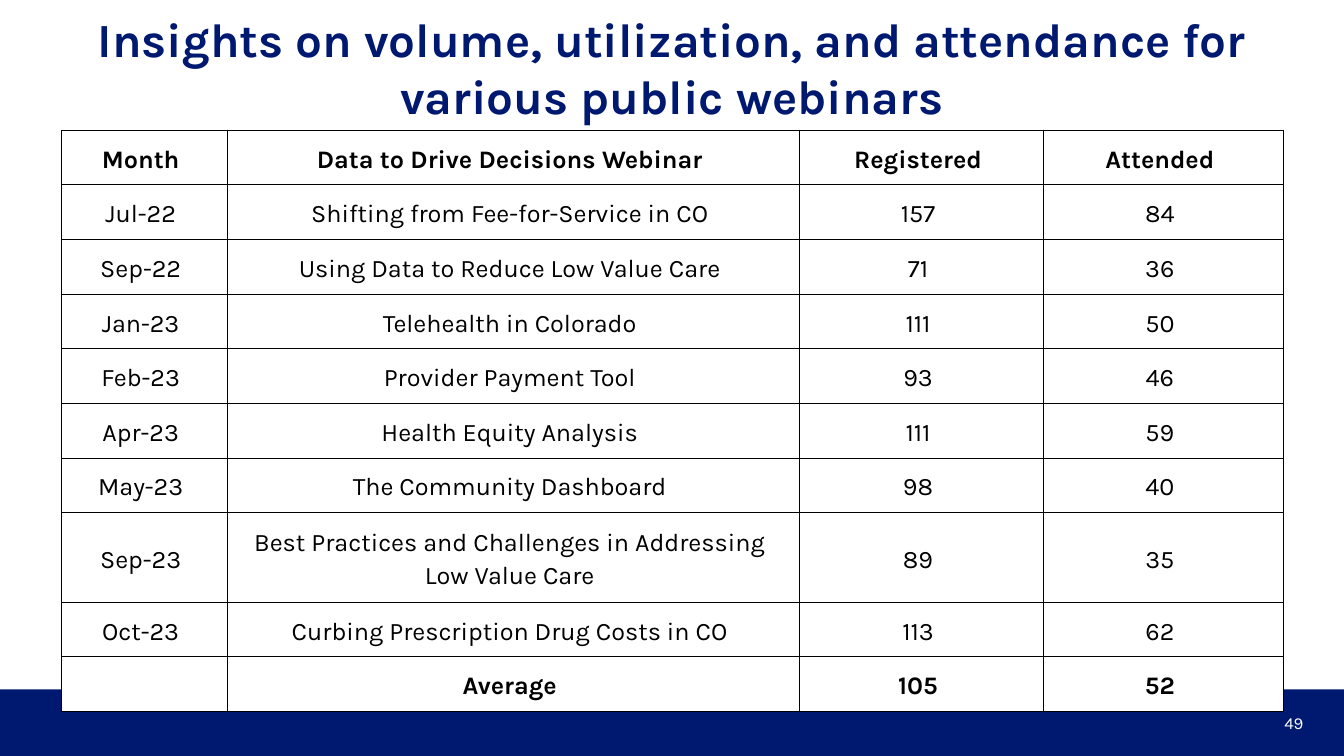
from lxml.etree import SubElement
from pptx import Presentation
from pptx.dml.color import RGBColor
from pptx.enum.shapes import MSO_SHAPE
from pptx.enum.text import MSO_ANCHOR, MSO_AUTO_SIZE, PP_ALIGN
from pptx.oxml.ns import qn
from pptx.util import Cm, Pt

NAVY, WHITE, BLACK = "001970", "FFFFFF", "000000"
FONT = "Karla"
TITLE = "Insights on volume, utilization, and attendance for various public webinars"
ROWS = [
    ("Month", "Data to Drive Decisions Webinar", "Registered", "Attended"),
    ("Jul-22", "Shifting from Fee-for-Service in CO", "157", "84"),
    ("Sep-22", "Using Data to Reduce Low Value Care", "71", "36"),
    ("Jan-23", "Telehealth in Colorado", "111", "50"),
    ("Feb-23", "Provider Payment Tool", "93", "46"),
    ("Apr-23", "Health Equity Analysis", "111", "59"),
    ("May-23", "The Community Dashboard", "98", "40"),
    ("Sep-23", "Best Practices and Challenges in Addressing Low Value Care", "89", "35"),
    ("Oct-23", "Curbing Prescription Drug Costs in CO", "113", "62"),
    ("", "Average", "105", "52"),
]
WIDTHS = (4.17, 14.43, 6.15, 6.04)
ROW, TALL = 1.36, 2.22
WRAPPED = 7


def color(code):
    return RGBColor.from_string(code)


def style(frame, size, code, align, bold=False):
    for para in frame.paragraphs:
        para.alignment = align
        para.font.size = Pt(size)
        for run in para.runs:
            font = run.font
            font.name, font.size, font.bold = FONT, Pt(size), bold
            font.color.rgb = color(code)


def inset(box, side, edge):
    box.margin_left = box.margin_right = Cm(side)
    box.margin_top = box.margin_bottom = Cm(edge)


def add_band(slide):
    band = slide.shapes.add_shape(
        MSO_SHAPE.RECTANGLE, Cm(0), Cm(17.37), Cm(33.87), Cm(1.68))
    band.shadow.inherit = False
    band.fill.solid()
    band.fill.fore_color.rgb = color(NAVY)
    band.line.fill.background()


def add_number(slide, text):
    box = slide.shapes.add_textbox(Cm(25.48), Cm(17.7), Cm(7.62), Cm(1.02))
    frame = box.text_frame
    frame.word_wrap = True
    frame.vertical_anchor = MSO_ANCHOR.MIDDLE
    frame.text = text
    style(frame, 12, WHITE, PP_ALIGN.RIGHT)


def set_title(slide):
    title = slide.shapes.title
    title.left, title.top = Cm(1.88), Cm(0)
    title.width, title.height = Cm(30.1), Cm(3.43)
    frame = title.text_frame
    frame.text = TITLE
    frame.word_wrap = True
    frame.auto_size = MSO_AUTO_SIZE.NONE
    frame.vertical_anchor = MSO_ANCHOR.TOP
    inset(frame, 0.25, 0.25)
    style(frame, 34, NAVY, PP_ALIGN.CENTER, True)


def add_edges(cell):
    props = cell._tc.get_or_add_tcPr()
    for at, side in enumerate(("a:lnL", "a:lnR", "a:lnT", "a:lnB")):
        line = SubElement(props, qn(side), w=str(Pt(0.75)))
        fill = SubElement(line, qn("a:solidFill"))
        SubElement(fill, qn("a:srgbClr"), val=BLACK)
        # Borders come before the fill in the cell properties
        props.insert(at, line)


def fill_cell(cell, text, bold):
    cell.fill.solid()
    cell.fill.fore_color.rgb = color(WHITE)
    add_edges(cell)
    inset(cell, 0.25, 0.25)
    cell.margin_right = Cm(0.43)
    cell.vertical_anchor = MSO_ANCHOR.MIDDLE
    cell.text_frame.text = text
    style(cell.text_frame, 18, BLACK, PP_ALIGN.CENTER, bold)
    cell.text_frame.paragraphs[0].line_spacing = 1.15


def add_grid(slide):
    last = len(ROWS) - 1
    high = ROW * last + TALL
    table = slide.shapes.add_table(
        len(ROWS), len(WIDTHS), Cm(1.55), Cm(3.28),
        Cm(sum(WIDTHS)), Cm(high)).table
    table.first_row = table.horz_banding = False
    for col, wide in zip(table.columns, WIDTHS):
        col.width = Cm(wide)
    for at, row in enumerate(ROWS):
        table.rows[at].height = Cm(TALL if at == WRAPPED else ROW)
        for col, text in enumerate(row):
            fill_cell(table.cell(at, col), text, at in (0, last))


def main():
    deck = Presentation()
    deck.slide_width, deck.slide_height = Cm(33.87), Cm(19.05)
    slide = deck.slides.add_slide(deck.slide_layouts[5])
    # Title and footer
    set_title(slide)
    add_band(slide)
    add_number(slide, "49")
    # Webinar table
    add_grid(slide)
    deck.save("out.pptx")


if __name__ == "__main__":
    main()
